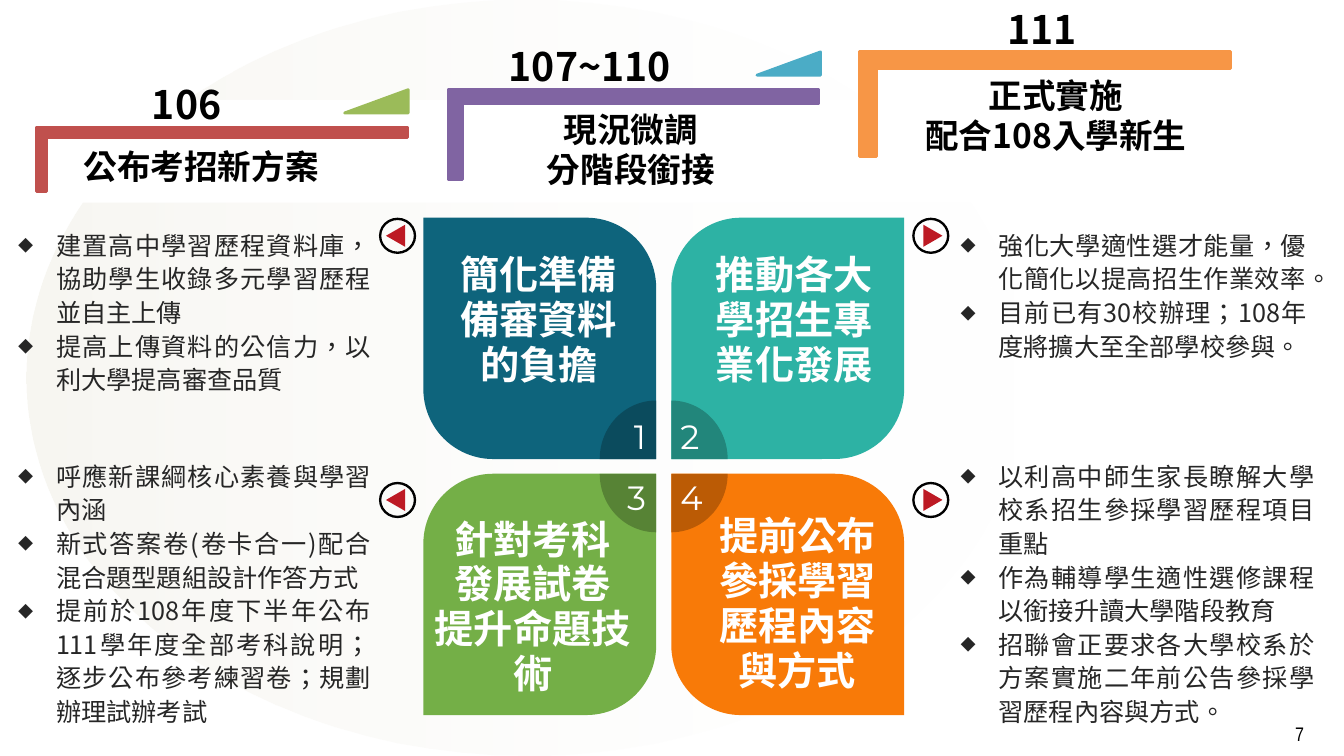
import math

from lxml import etree
from pptx import Presentation
from pptx.dml.color import RGBColor
from pptx.enum import shapes, text
from pptx.oxml import ns
from pptx.util import Pt

CJK = "Noto Sans CJK SC"
COLORS = {
    "black": "000000", "white": "FFFFFF", "body": "262626", "cream": "EEECE1",
    "red": "C0504D", "purple": "8064A2", "amber": "F79646",
    "green": "9BBB59", "blue": "4BACC6", "arrow": "BD1A24",
    "tile 1": "0E647C", "tile 2": "2DB2A4", "tile 3": "74AF47", "tile 4": "F87A08",
    "corner 1": "0B4B5D", "corner 2": "22867B", "corner 3": "578335", "corner 4": "BB5B05",
}
ALIGN = text.PP_ALIGN

# Year, label box left and width, caption box, caption inset, caption, bar colour and height
STEPS = [
    ("106", 101.5, 114, (20.9, 95, 245.5, 36.7), 9.4, ["公布考招新方案"], "red", 46.1),
    ("107~110", 356.4, 181, (331.2, 69.1, 239, 78.5), 8.6, ["現況微調", "分階段銜接"], "purple", 64.8),
    ("111", 712.8, 114, (614.2, 44.6, 280, 78.5), 8.6, ["正式實施", "配合108入學新生"], "amber", 74.9),
]
# Text box and text; row by row
TILES = [
    ((326.9, 177.1, 115.9, 100.8), ["簡化準備備審資料的負擔"]),
    ((500.4, 177.1, 133.9, 100.8), ["推動各大學招生專業化發展"]),
    ((306.7, 365.8, 147.6, 133.2), ["針對考科", "發展試卷", "提升命題技術"]),
    ((508.3, 363.6, 122.4, 133.2), ["提前公布參採學習歷程內容與方式"]),
]
# List box and its items; row by row
LISTS = [
    ((13, 162, 252, 121), [
        "建置高中學習歷程資料庫，協助學生收錄多元學習歷程並自主上傳",
        "提高上傳資料的公信力，以利大學提高審查品質"]),
    ((686.2, 162, 247, 97.2), [
        "強化大學適性選才能量，優化簡化以提高招生作業效率。",
        "目前已有30校辦理；108年度將擴大至全部學校參與。"]),
    ((13, 326.9, 252, 193.7), [
        "呼應新課綱核心素養與學習內涵",
        "新式答案卷(卷卡合一)配合混合題型題組設計作答方式",
        "提前於108年度下半年公布111學年度全部考科說明；逐步公布參考練習卷；規劃辦理試辦考試"]),
    ((686.2, 326.9, 252.7, 193.7), [
        "以利高中師生家長瞭解大學校系招生參採學習歷程項目重點",
        "作為輔導學生適性選修課程以銜接升讀大學階段教育",
        "招聯會正要求各大學校系於方案實施二年前公告參採學習歷程內容與方式。"]),
]
TILE_WIDTH, TILE_HEIGHT = 166.3, 172.4


def color(name):
    return RGBColor.from_string(COLORS[name])


def paint(shape, fill, line=None):
    shape.shadow.inherit = False
    shape.fill.solid()
    shape.fill.fore_color.rgb = color(fill)
    if line:
        shape.line.color.rgb = color(line)
        shape.line.width = Pt(2)
    else:
        shape.line.fill.background()


def add_preset(page, kind, place, fill, line=None, adjust=(), turn=0):
    shape = page.shapes.add_shape(kind, *map(Pt, place))
    for index, value in enumerate(adjust):
        shape.adjustments[index] = value
    shape.rotation = turn
    paint(shape, fill, line)
    return shape


def add_turned(page, kind, place, turn, fill, line=None, adjust=()):
    """Add a shape on its side so that it fills the given place."""
    left, top, width, height = place
    shift = (width - height) / 2
    lying = (left + shift, top - shift, height, width)
    return add_preset(page, kind, lying, fill, line, adjust, turn)


def set_frame(frame, insets):
    frame.word_wrap = True
    frame.auto_size = text.MSO_AUTO_SIZE.NONE
    frame.vertical_anchor = text.MSO_ANCHOR.TOP
    frame.margin_left, frame.margin_top, frame.margin_right, frame.margin_bottom = map(Pt, insets)


def add_bullet(para):
    props = para._p.get_or_add_pPr()
    props.set("marL", str(Pt(27)))
    props.set("indent", str(-Pt(27)))
    etree.SubElement(props, ns.qn("a:buSzPct")).set("val", "60000")
    etree.SubElement(props, ns.qn("a:buFont")).set("typeface", CJK)
    etree.SubElement(props, ns.qn("a:buChar")).set("char", "◆")


def write(frame, lines, size, ink, align, font=CJK, bold=False, spacing=None, bullets=False):
    for index, line in enumerate(lines):
        para = frame.paragraphs[0] if index == 0 else frame.add_paragraph()
        para.alignment = align
        if bullets:
            add_bullet(para)
        para.space_before = para.space_after = Pt(0)
        if spacing:
            para.line_spacing = Pt(spacing)
        span = para.add_run()
        span.text = line
        span.font.size = Pt(size)
        span.font.bold = bold
        span.font.name = font
        span.font.color.rgb = color(ink)
        props = span._r.get_or_add_rPr()
        props.set("lang", "zh-TW")
        etree.SubElement(props, ns.qn("a:ea")).set("typeface", CJK)


def add_text(page, place, lines, size, ink, align, insets=(0, 0, 0, 0), **style):
    box = page.shapes.add_textbox(*map(Pt, place))
    set_frame(box.text_frame, insets)
    write(box.text_frame, lines, size, ink, align, **style)


def add_backdrop(page):
    oval = add_preset(page, shapes.MSO_SHAPE.OVAL, (19, 0, 714, 540), "white")
    oval.fill.gradient()
    oval.fill.gradient_angle = 0
    for stop, name, position in zip(oval.fill.gradient_stops, ("cream", "white"), (0, 1)):
        stop.color.rgb = color(name)
        stop.position = position
    for stop, alpha in zip(oval.element.iter(ns.qn("a:gs")), ("44000", "0")):
        etree.SubElement(stop[0], ns.qn("a:alpha")).set("val", alpha)
    # Behind the list placeholders
    oval.element.getparent().insert(2, oval.element)


def add_step(page, index, step):
    year, left, width, place, inset, caption, tone, height = step
    rise = 27 * index
    bar = (25.9 + 294.1 * index, 90.7 - rise, 265, height)
    add_turned(page, shapes.MSO_SHAPE.CORNER, bar, 90, tone, tone, (0.161, 0.161))
    add_text(page, place, caption, 24, "black", ALIGN.CENTER, (inset,) * 4, bold=True, spacing=28.8)
    add_text(page, (left, 54 - rise, width, 36.7), [year], 28, "black", ALIGN.LEFT,
             (7.2, 3.6, 7.2, 3.6), bold=True, spacing=33.6)
    if index < 2:
        wedge = ("green", "blue")[index]
        add_preset(page, shapes.MSO_SHAPE.ISOSCELES_TRIANGLE,
                   (246.2 + 294.5 * index, 64.1 - rise, 45.4, 16.6), wedge, wedge, (1,))


def add_quarter(page, corner, side, level, fill):
    """Add a quarter disc that spreads from the corner towards side and level."""
    x, y = corner
    angles = [math.radians(90 * part / 24) for part in range(25)]
    arc = [(Pt(x + side * 40.3 * math.cos(a)), Pt(y + level * 41.8 * math.sin(a))) for a in angles]
    outline = page.shapes.build_freeform(Pt(x), Pt(y))
    outline.add_line_segments(arc, close=True)
    paint(outline.convert_to_shape(), fill)


def add_tile(page, index, tile):
    place, lines = tile
    row, column = divmod(index, 2)
    left, top = 302.4 + 177.1 * column, 155.5 + 182.9 * row
    rounding = (0, 0.3) if row == column else (0.3, 0)
    add_preset(page, shapes.MSO_SHAPE.ROUND_2_DIAG_RECTANGLE,
               (left, top, TILE_WIDTH, TILE_HEIGHT), f"tile {index + 1}", adjust=rounding)
    corner = (left + TILE_WIDTH * (1 - column), top + TILE_HEIGHT * (1 - row))
    add_quarter(page, corner, 2 * column - 1, 2 * row - 1, f"corner {index + 1}")
    add_text(page, (447.8 + 38.2 * column, 297.4 + 43.2 * row, 13.7, 28.8), [str(index + 1)],
             24, "white", ALIGN.RIGHT, font="Montserrat")
    add_text(page, place, lines, 28, "white", ALIGN.CENTER, (0, 3.6, 0, 0),
             font="Arial", bold=True, spacing=32)


def add_arrow_badge(page, index):
    row, column = divmod(index, 2)
    left, top = 270.7 + 380.9 * column, 155.5 + 188.7 * row
    add_preset(page, shapes.MSO_SHAPE.DONUT, (left, top, 26.6, 25.9), "black", adjust=(0.065,))
    add_turned(page, shapes.MSO_SHAPE.ISOSCELES_TRIANGLE,
               (left + 5 + 2.9 * column, top + 5, 13.7, 15.8), 90 if column else 270, "arrow")


def fill_list(holder, place, items):
    holder.left, holder.top, holder.width, holder.height = map(Pt, place)
    set_frame(holder.text_frame, (0, 0, 0, 0))
    write(holder.text_frame, items, 18, "body", ALIGN.JUSTIFY, spacing=24, bullets=True)


def main():
    deck = Presentation()
    deck.slide_width, deck.slide_height = Pt(960), Pt(540)
    page = deck.slides.add_slide(deck.slide_layouts.get_by_name("Comparison"))
    title, *holders = page.placeholders
    title.element.getparent().remove(title.element)

    # Background
    add_backdrop(page)
    add_preset(page, shapes.MSO_SHAPE.RECTANGLE, (0, 71.3, 960, 73.4), "white")

    # Timeline
    for index, step in enumerate(STEPS):
        add_step(page, index, step)

    # Four tiles with their lists and arrows
    for index, (tile, holder, (place, items)) in enumerate(zip(TILES, holders, LISTS)):
        add_tile(page, index, tile)
        fill_list(holder, place, items)
        add_arrow_badge(page, index)

    # Page number
    add_text(page, (848.2, 511.9, 111.8, 18.7), ["7"], 14, "black", ALIGN.RIGHT,
             (0, 3.6, 28.5, 0), font="Arial Narrow")
    deck.save("out.pptx")


if __name__ == "__main__":
    main()
